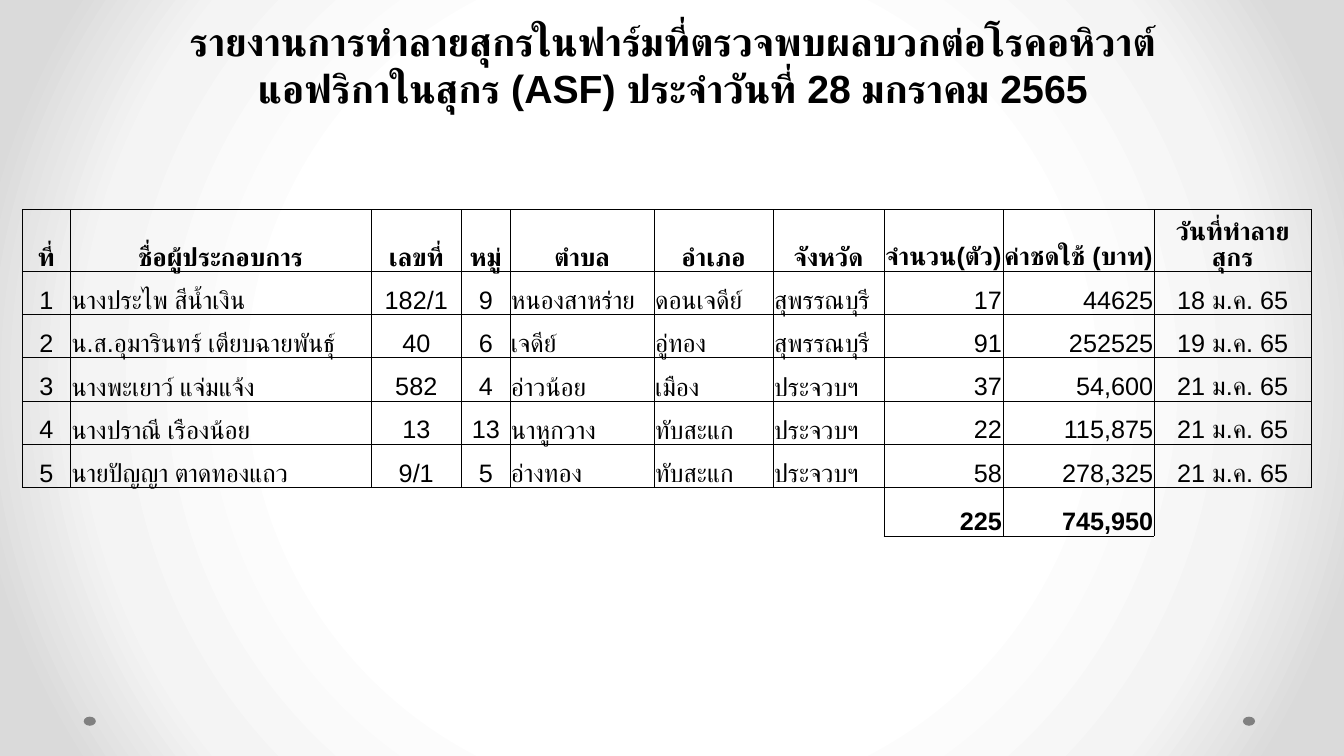
from dataclasses import dataclass
from typing import Any

from lxml.etree import SubElement
from pptx import Presentation
from pptx.dml.color import RGBColor
from pptx.enum.shapes import MSO_SHAPE
from pptx.enum.text import MSO_ANCHOR, PP_ALIGN
from pptx.oxml import parse_xml
from pptx.oxml.ns import nsdecls, qn
from pptx.util import Emu, Inches, Pt

WIDTH, HEIGHT = Inches(13.33), Inches(7.5)
INK, DOT_GREY = "000000", "808080"
BACKDROP = {50: "FFFFFF", 76: "F4F4F4", 92: "DADADA"}
TITLE = ("รายงานการทำลายสุกรในฟาร์มที่ตรวจพบผลบวกต่อโรคอหิวาต์แอฟริกาในสุกร (ASF) "
         "ประจำวันที่ 28 มกราคม 2565")
LEFT, CENTER, RIGHT = PP_ALIGN.LEFT, PP_ALIGN.CENTER, PP_ALIGN.RIGHT


@dataclass(frozen=True)
class Column:
    heading: str
    share: float
    align: PP_ALIGN


@dataclass(frozen=True)
class Area:
    left: float
    top: float
    width: float
    height: float


COLUMNS = [
    Column("ที่", 3.6, CENTER),
    Column("ชื่อผู้ประกอบการ", 22.35, LEFT),
    Column("เลขที่", 6.75, CENTER),
    Column("หมู่", 3.6, CENTER),
    Column("ตำบล", 10.73, LEFT),
    Column("อำเภอ", 8.85, LEFT),
    Column("จังหวัด", 8.25, LEFT),
    Column("จำนวน(ตัว)", 8.85, RIGHT),
    Column("ค่าชดใช้ (บาท)", 11.25, RIGHT),
    Column("วันที่ทำลายสุกร", 11.7, CENTER),
]
FARMS = [
    ["1", "นางประไพ สีน้ำเงิน", "182/1", "9", "หนองสาหร่าย", "ดอนเจดีย์", "สุพรรณบุรี",
     "17", "44625", "18 ม.ค. 65"],
    ["2", "น.ส.อุมารินทร์ เตียบฉายพันธุ์", "40", "6", "เจดีย์", "อู่ทอง", "สุพรรณบุรี",
     "91", "252525", "19 ม.ค. 65"],
    ["3", "นางพะเยาว์ แจ่มแจ้ง", "582", "4", "อ่าวน้อย", "เมือง", "ประจวบฯ",
     "37", "54,600", "21 ม.ค. 65"],
    ["4", "นางปราณี เรืองน้อย", "13", "13", "นาหูกวาง", "ทับสะแก", "ประจวบฯ",
     "22", "115,875", "21 ม.ค. 65"],
    ["5", "นายปัญญา ตาดทองแถว", "9/1", "5", "อ่างทอง", "ทับสะแก", "ประจวบฯ",
     "58", "278,325", "21 ม.ค. 65"],
]
TOTALS = [""] * 7 + ["225", "745,950", ""]
ROWS = [[column.heading for column in COLUMNS], *FARMS, TOTALS]
ROW_SHARES = [5.73] * (len(ROWS) - 1) + [6.4]

TITLE_AREA = Area(10.05, 1.6, 80, 13.87)
TABLE_AREA = Area(1.65, 27.73, sum(column.share for column in COLUMNS), sum(ROW_SHARES))
DOT_AREAS = [Area(left, 94.8, 0.9, 1.2) for left in (92.48, 6.23)]
CELL_FORMAT = {"vertical_anchor": MSO_ANCHOR.BOTTOM, "margin_left": Inches(0.01),
               "margin_right": Inches(0.01), "margin_top": Inches(0.01), "margin_bottom": 0}
SIDES = {"a:lnL": (0, -1), "a:lnR": (0, 1), "a:lnT": (-1, 0), "a:lnB": (1, 0)}


def color(value: str) -> RGBColor:
    """Turn a hex string into a colour."""
    return RGBColor.from_string(value)


def across(share: float) -> Emu:
    """Give a percentage of the slide width."""
    return Emu(round(WIDTH * share / 100))


def down(share: float) -> Emu:
    """Give a percentage of the slide height."""
    return Emu(round(HEIGHT * share / 100))


def place(area: Area) -> tuple[Emu, Emu, Emu, Emu]:
    """Turn an area into left, top, width and height."""
    return across(area.left), down(area.top), across(area.width), down(area.height)


def apply(target: Any, values: dict[str, Any]) -> None:
    """Set each named attribute on the target."""
    for name, value in values.items():
        setattr(target, name, value)


def paint_background(page: Any) -> None:
    """Fill the page with a round gradient."""
    stops = "".join(f'<a:gs pos="{share * 1000}"><a:srgbClr val="{value}"/></a:gs>'
                    for share, value in BACKDROP.items())
    page.element.cSld.insert(0, parse_xml(
        f'<p:bg {nsdecls("p", "a")}><p:bgPr><a:gradFill rotWithShape="1">'
        f'<a:gsLst>{stops}</a:gsLst><a:path path="circle">'
        '<a:fillToRect l="50000" t="50000" r="50000" b="50000"/></a:path>'
        '</a:gradFill><a:effectLst/></p:bgPr></p:bg>'))


def write(frame: Any, text: str, size: float, bold: bool, align: PP_ALIGN) -> None:
    """Write one paragraph in a text frame."""
    para = frame.paragraphs[0]
    para.alignment = align
    span = para.add_run()
    span.text = text
    apply(span.font, {"name": "Arial", "size": Pt(size), "bold": bold})
    span.font.color.rgb = color(INK)


def add_dot(page: Any, area: Area) -> None:
    """Draw a small footer dot."""
    dot = page.shapes.add_shape(MSO_SHAPE.OVAL, *place(area))
    dot.shadow.inherit = False
    dot.fill.solid()
    dot.fill.fore_color.rgb = color(DOT_GREY)
    dot.line.fill.background()


def has_text(row: int, column: int) -> bool:
    """Tell whether a table position exists and holds text."""
    inside = 0 <= row < len(ROWS) and 0 <= column < len(COLUMNS)
    return inside and bool(ROWS[row][column])


def rule_cell(cell: Any, row: int, column: int) -> None:
    """Rule each side that touches a filled cell."""
    properties = cell._tc.get_or_add_tcPr()
    for tag, (row_step, column_step) in SIDES.items():
        line = SubElement(properties, qn(tag), w=str(Pt(0.5)))
        if has_text(row, column) or has_text(row + row_step, column + column_step):
            fill = SubElement(line, qn("a:solidFill"))
            SubElement(fill, qn("a:srgbClr"), val=INK)
        else:
            SubElement(line, qn("a:noFill"))


def add_farm_table(page: Any) -> None:
    """Draw the table of farms with its totals."""
    table = page.shapes.add_table(len(ROWS), len(COLUMNS), *place(TABLE_AREA)).table
    apply(table, {"first_row": False, "horz_banding": False})
    for index, column in enumerate(COLUMNS):
        table.columns[index].width = across(column.share)
    for row, (texts, share) in enumerate(zip(ROWS, ROW_SHARES)):
        table.rows[row].height = down(share)
        for index, (text, column) in enumerate(zip(texts, COLUMNS)):
            cell = table.cell(row, index)
            rule_cell(cell, row, index)
            cell.fill.background()
            if text:
                apply(cell, CELL_FORMAT)
                align = CENTER if row == 0 else column.align
                write(cell.text_frame, text, 18, row in (0, len(ROWS) - 1), align)


def main() -> None:
    """Build the slide and save the deck."""
    deck = Presentation()
    apply(deck, {"slide_width": WIDTH, "slide_height": HEIGHT})
    page = deck.slides.add_slide(deck.slide_layouts[6])
    paint_background(page)
    for area in DOT_AREAS:
        add_dot(page, area)
    box = page.shapes.add_textbox(*place(TITLE_AREA))
    box.text_frame.word_wrap = True
    write(box.text_frame, TITLE, 28, True, CENTER)
    add_farm_table(page)
    deck.save("out.pptx")


if __name__ == "__main__":
    main()
